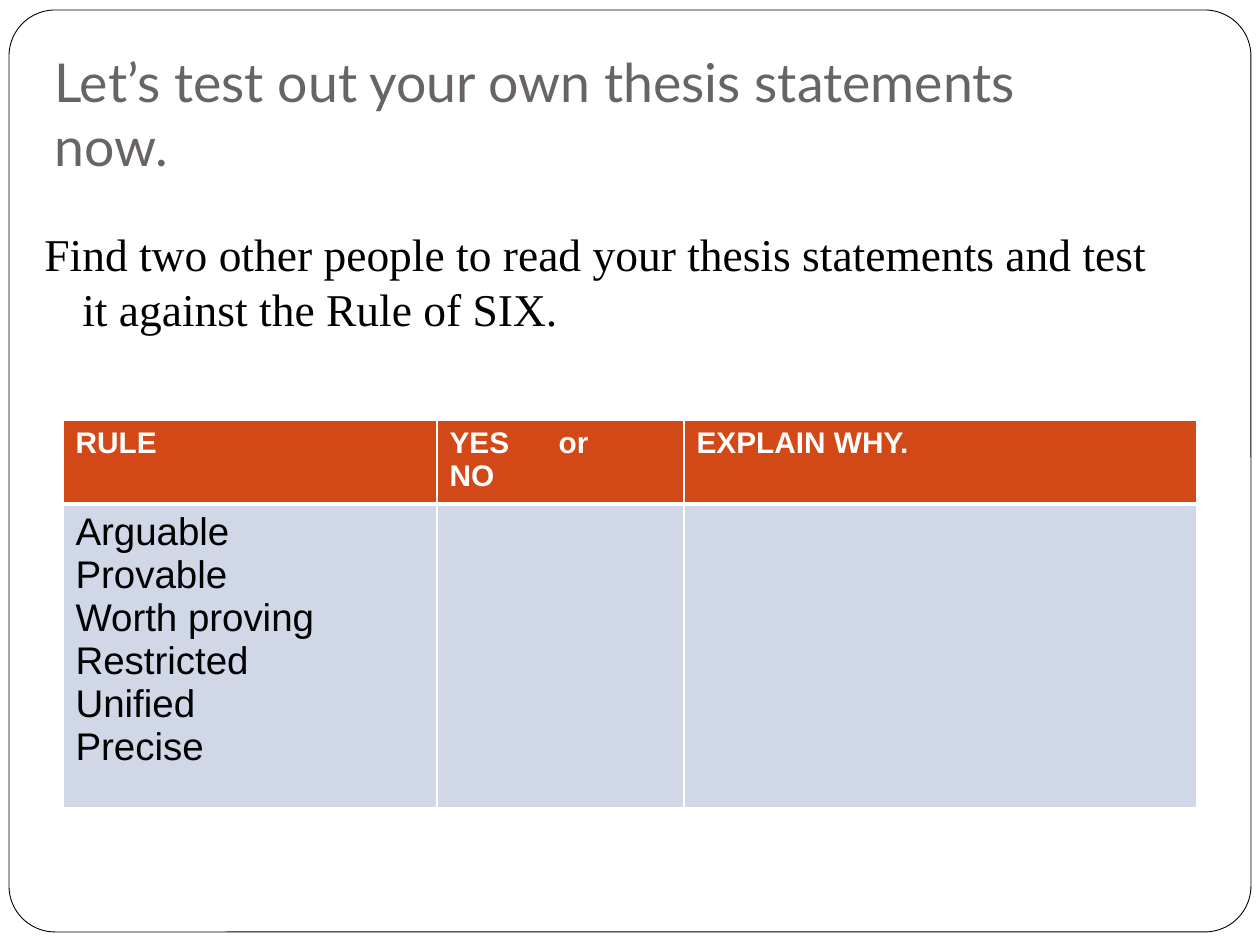
from lxml.etree import SubElement
from pptx import Presentation
from pptx.dml.color import RGBColor
from pptx.enum.shapes import MSO_SHAPE
from pptx.enum.text import MSO_ANCHOR, PP_ALIGN
from pptx.oxml.ns import qn
from pptx.util import Emu, Pt

PX_PER_INCH = 126
WHITE = RGBColor(0xFF, 0xFF, 0xFF)
BLACK = RGBColor(0, 0, 0)
GRAY = RGBColor(0x69, 0x64, 0x64)
ORANGE = RGBColor(0xD3, 0x48, 0x17)
PALE_BLUE = RGBColor(0xD0, 0xD8, 0xE8)

HEADERS = ["RULE", "YES\tor\vNO", "EXPLAIN WHY."]
RULES = ["Arguable", "Provable", "Worth proving", "Restricted", "Unified", "Precise"]
COLUMN_WIDTHS = [374, 247, 513]
ROW_HEIGHTS = [78, 304]


def px(length):
    return Emu(round(length * 914400 / PX_PER_INCH))


def style_paragraph(para, font_name, size, color, bold=False):
    para.alignment = PP_ALIGN.LEFT
    para.font.name = font_name
    para.font.size = Pt(size)
    para.font.color.rgb = color
    para.font.bold = bold


def add_frame(page):
    frame = page.shapes.add_shape(MSO_SHAPE.ROUNDED_RECTANGLE, px(9), px(10), px(1242), px(922))
    frame.adjustments[0] = 0.05
    frame.shadow.inherit = False
    frame.fill.solid()
    frame.fill.fore_color.rgb = WHITE
    frame.line.color.rgb = BLACK
    frame.line.width = Pt(0.5)


def add_text(page, bounds, text, font_name, size, color, anchor=MSO_ANCHOR.TOP):
    box = page.shapes.add_textbox(*map(px, bounds))
    frame = box.text_frame
    frame.word_wrap = True
    frame.vertical_anchor = anchor
    para = frame.paragraphs[0]
    para.text = text
    style_paragraph(para, font_name, size, color)
    return box


def set_hanging_indent(para, indent):
    properties = para._p.get_or_add_pPr()
    properties.set("marL", str(px(indent)))
    properties.set("indent", str(-px(indent)))


def add_tab_stop(para, position):
    tabs = SubElement(para._p.get_or_add_pPr(), qn("a:tabLst"))
    SubElement(tabs, qn("a:tab"), pos=str(px(position)), algn="l")


def set_borders(cell, top, bottom):
    properties = cell._tc.get_or_add_tcPr()
    for side, width in (("L", 1), ("R", 1), ("T", top), ("B", bottom)):
        line = SubElement(properties, qn(f"a:ln{side}"), w=str(Pt(width)))
        fill = SubElement(line, qn("a:solidFill"))
        SubElement(fill, qn("a:srgbClr"), val=str(WHITE))


def fill_cell(cell, lines, size, text_color, fill_color, bold):
    cell.text = "\n".join(lines)
    for para in cell.text_frame.paragraphs:
        style_paragraph(para, "Arial", size, text_color, bold)
    cell.fill.solid()
    cell.fill.fore_color.rgb = fill_color


def add_rule_table(page):
    table = page.shapes.add_table(
        2, 3, px(63), px(420), px(sum(COLUMN_WIDTHS)), px(sum(ROW_HEIGHTS))
    ).table
    for column, width in zip(table.columns, COLUMN_WIDTHS):
        column.width = px(width)
    for row, height in zip(table.rows, ROW_HEIGHTS):
        row.height = px(height)
    for index, header in enumerate(HEADERS):
        header_cell, body_cell = table.cell(0, index), table.cell(1, index)
        set_borders(header_cell, 1, 3)
        set_borders(body_cell, 3, 1)
        fill_cell(header_cell, [header], 17, WHITE, ORANGE, True)
        fill_cell(body_cell, RULES if index == 0 else [], 22, BLACK, PALE_BLUE, False)
    add_tab_stop(table.cell(0, 1).text_frame.paragraphs[0], 109)


def main():
    deck = Presentation()
    deck.slide_width, deck.slide_height = px(1260), px(945)
    page = deck.slides.add_slide(deck.slide_layouts[6])
    add_frame(page)
    title = add_text(
        page, (42, 38, 1092, 157), "Let’s test out your own thesis statements now.",
        "Lato", 30.6, GRAY, MSO_ANCHOR.MIDDLE,
    )
    title.text_frame.margin_bottom = px(13)
    task = add_text(
        page, (32, 220, 1134, 624),
        "Find two other people to read your thesis statements and test it against the Rule of SIX.",
        "Times New Roman", 26, BLACK,
    )
    task_para = task.text_frame.paragraphs[0]
    task_para.space_before = Pt(5.8)
    set_hanging_indent(task_para, 38)
    add_rule_table(page)
    deck.save("out.pptx")


if __name__ == "__main__":
    main()
